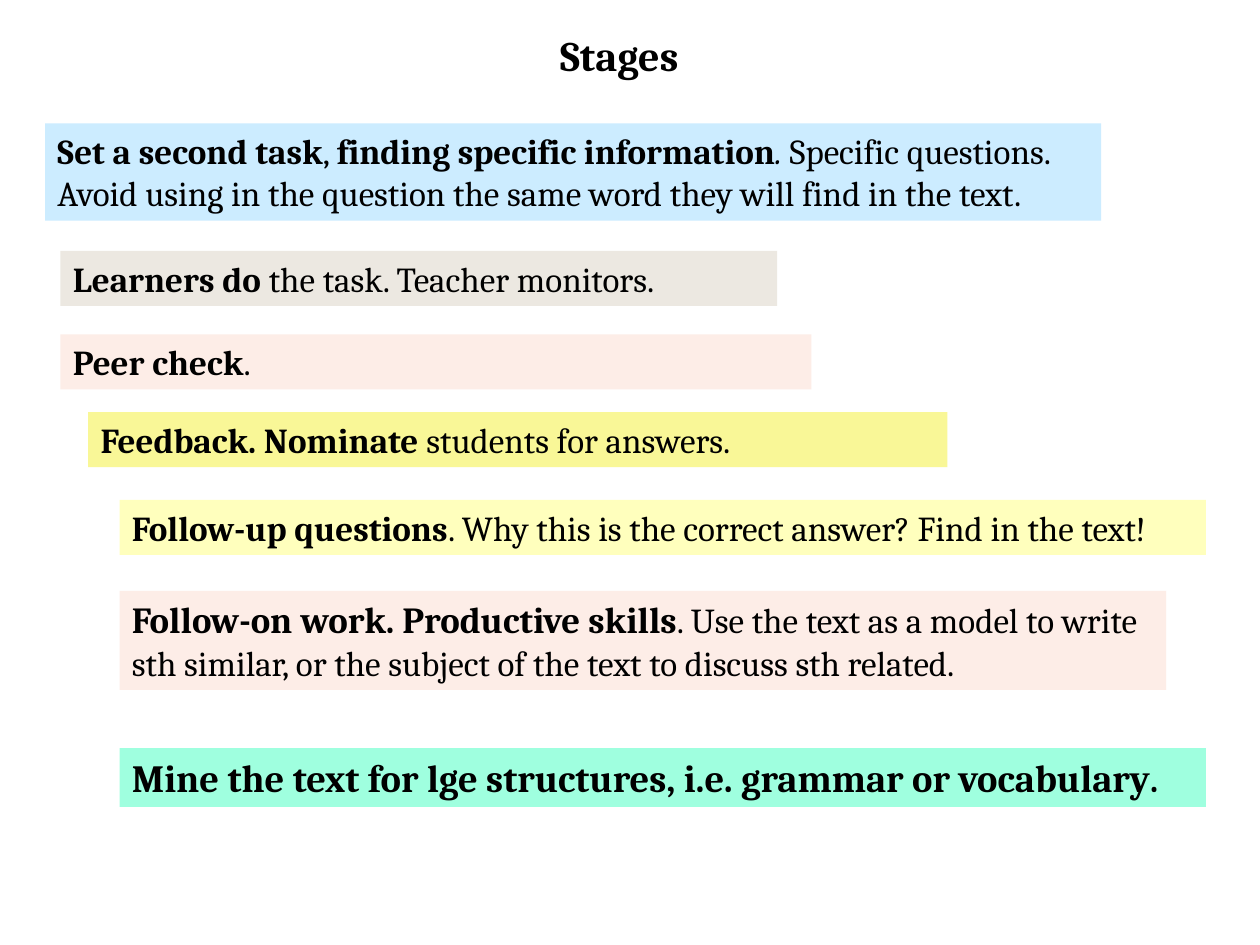
from pptx import Presentation
from pptx import util as u
from pptx.dml.color import RGBColor
from pptx.enum import text

COLOURS = {
    "ink": "000000",
    "blue": "CCECFF",
    "stone": "ECE8E1",
    "rose": "FDEDE7",
    "gold": "F9F797",
    "lemon": "FFFFBD",
    "mint": "9FFFDF",
}


def add_run(paragraph, wording, size=20, bold=False, italic=False,
            font="Cambria", colour="ink"):
    run = paragraph.add_run()
    run.text = wording
    run.font.name = font
    run.font.size = u.Pt(size)
    run.font.bold = bold
    run.font.italic = italic
    run.font.color.rgb = RGBColor.from_string(COLOURS[colour])


class StageSlide:
    """Holds the slide and the look shared by its elements."""

    def __init__(self, presentation):
        self.slide = presentation.slides.add_slide(presentation.slide_layouts[5])

    def title(self, wording, left, top, width, height):
        shape = self.slide.shapes.title
        shape.left, shape.top = u.Cm(left), u.Cm(top)
        shape.width, shape.height = u.Cm(width), u.Cm(height)
        frame = shape.text_frame
        frame.vertical_anchor = text.MSO_ANCHOR.TOP
        paragraph = frame.paragraphs[0]
        paragraph.alignment = text.PP_ALIGN.CENTER
        add_run(paragraph, wording, size=24, bold=True)

    def band(self, fill, left, top, width, height, runs):
        """Add a filled text box; runs are (wording, format) pairs."""
        shape = self.slide.shapes.add_textbox(
            u.Cm(left), u.Cm(top), u.Cm(width), u.Cm(height))
        shape.fill.solid()
        shape.fill.fore_color.rgb = RGBColor.from_string(COLOURS[fill])
        frame = shape.text_frame
        frame.word_wrap = True
        frame.auto_size = text.MSO_AUTO_SIZE.SHAPE_TO_FIT_TEXT
        for wording, style in runs:
            add_run(frame.paragraphs[0], wording, **style)


BOLD = {"bold": True}
PLAIN = {}

STAGES = [
    ("blue", 0.91, 2.49, 21.29, 1.96, [
        ("Set a second task", BOLD),
        (", ", PLAIN),
        ("finding specific information", BOLD),
        (". ", {"italic": True}),
        ("Specific questions. Avoid using in the question the same word "
         "they will find in the text.", PLAIN)]),
    ("stone", 1.22, 5.06, 14.45, 1.11, [
        ("Learners do ", BOLD),
        ("the task. Teacher monitors.", PLAIN)]),
    ("rose", 1.22, 6.74, 15.14, 1.11, [
        ("Peer check", BOLD),
        (".", PLAIN)]),
    ("gold", 1.78, 8.31, 17.32, 1.11, [
        ("Feedback. Nominate ", BOLD),
        ("students for answers.", PLAIN)]),
    ("lemon", 2.41, 10.08, 21.9, 1.11, [
        ("Follow-up questions", BOLD),
        (". Why this is the correct answer? Find in the text!", PLAIN)]),
    ("rose", 2.41, 11.91, 21.1, 2.0, [
        ("Follow-on work. Productive skills", {"bold": True, "size": 21}),
        (". Use the text as a model to write sth similar, or the subject "
         "of the text to discuss sth related.", PLAIN)]),
    ("mint", 2.41, 15.08, 21.9, 1.19, [
        ("Mine the text for lge structures, i.e. grammar or vocabulary",
         {"bold": True, "size": 22}),
        (".", BOLD)]),
]


def main():
    presentation = Presentation()
    presentation.slide_width = u.Cm(25.4)
    presentation.slide_height = u.Cm(19.05)
    page = StageSlide(presentation)
    page.title("Stages", 5.59, 0.46, 13.79, 1.27)
    for stage in STAGES:
        page.band(*stage)
    presentation.save("out.pptx")


if __name__ == "__main__":
    main()
